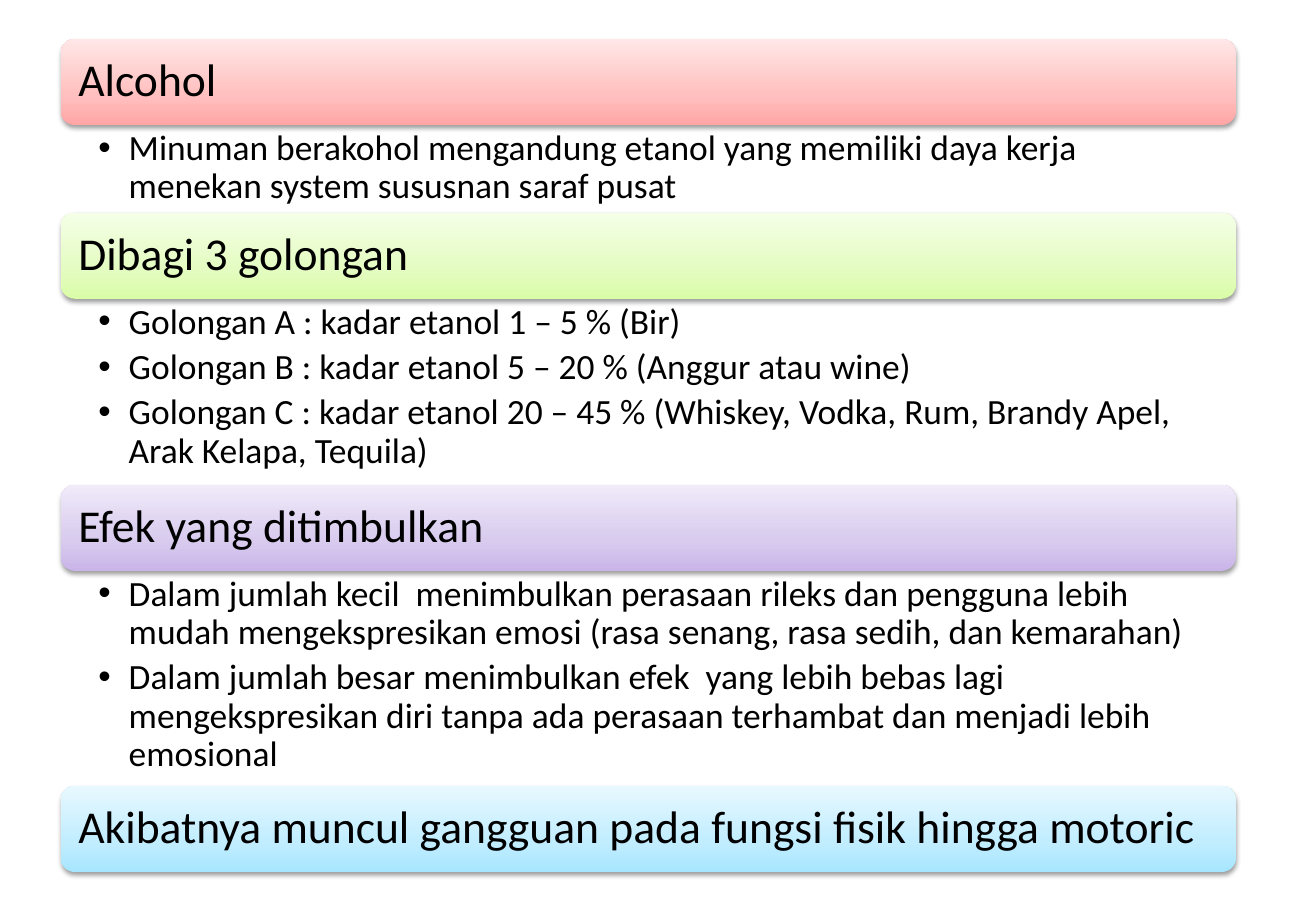
from copy import deepcopy

from lxml.etree import SubElement
from pptx import Presentation
from pptx.dml.color import RGBColor
from pptx.enum.shapes import MSO_SHAPE
from pptx.enum.text import MSO_ANCHOR, PP_ALIGN
from pptx.oxml.ns import qn
from pptx.util import Pt

PX = 9144
SLIDE_W, SLIDE_H = 1083, 750
LEFT, TOP, WIDTH, BAR_H = 50, 32, 967, 71
INDENT = 25

BLACK = RGBColor(0x00, 0x00, 0x00)
RED = [RGBColor(0xFF, 0xA6, 0xA5), RGBColor(0xFF, 0xC0, 0xBF), RGBColor(0xFF, 0xE7, 0xE7)]
GREEN = [RGBColor(0xDA, 0xFD, 0xA7), RGBColor(0xE4, 0xFC, 0xC2), RGBColor(0xF5, 0xFF, 0xE7)]
PURPLE = [RGBColor(0xC9, 0xB5, 0xE8), RGBColor(0xD8, 0xCB, 0xEE), RGBColor(0xF0, 0xEA, 0xF9)]
BLUE = [RGBColor(0xA7, 0xE6, 0xFF), RGBColor(0xC1, 0xED, 0xFF), RGBColor(0xE7, 0xF8, 0xFF)]
STOPS = [0, 0.35, 1]

SECTIONS = [
    ("Alcohol", RED, 72, [
        "Minuman berakohol mengandung etanol yang memiliki daya kerja menekan system sususnan saraf pusat",
    ]),
    ("Dibagi 3 golongan", GREEN, 153, [
        "Golongan A : kadar etanol 1 – 5 % (Bir)",
        "Golongan B : kadar etanol 5 – 20 % (Anggur atau wine)",
        "Golongan C : kadar etanol 20 – 45 % (Whiskey, Vodka, Rum, Brandy Apel, Arak Kelapa, Tequila)",
    ]),
    ("Efek yang ditimbulkan", PURPLE, 177, [
        "Dalam jumlah kecil  menimbulkan perasaan rileks dan pengguna lebih mudah "
        "mengekspresikan emosi (rasa senang, rasa sedih, dan kemarahan)",
        "Dalam jumlah besar menimbulkan efek  yang lebih bebas lagi mengekspresikan diri "
        "tanpa ada perasaan terhambat dan menjadi lebih emosional",
    ]),
    ("Akibatnya muncul gangguan pada fungsi fisik hingga motoric", BLUE, 0, []),
]

BAR_FRAME = {"margin_left": 11 * PX, "margin_right": 11 * PX, "margin_top": 11 * PX,
             "margin_bottom": 11 * PX, "vertical_anchor": MSO_ANCHOR.MIDDLE, "word_wrap": True}
BODY_FRAME = {"margin_left": 31 * PX, "margin_right": 21 * PX, "margin_top": 4 * PX,
              "margin_bottom": 4 * PX, "vertical_anchor": MSO_ANCHOR.TOP, "word_wrap": True}
PARAGRAPH = {"alignment": PP_ALIGN.LEFT, "line_spacing": 0.9, "space_after": Pt(4.2)}
BAR_FONT = {"name": "Calibri", "size": Pt(27)}
BODY_FONT = {"name": "Calibri", "size": Pt(21)}


def apply(target, values):
    for name, value in values.items():
        setattr(target, name, value)


def write(tf, lines, frame, font):
    apply(tf, frame)
    for i, line in enumerate(lines):
        p = tf.add_paragraph() if i else tf.paragraphs[0]
        apply(p, PARAGRAPH)
        r = p.add_run()
        r.text = line
        apply(r.font, font)
        r.font.color.rgb = BLACK


def add_bullets(tf):
    for p in tf.paragraphs:
        pPr = p._p.get_or_add_pPr()
        pPr.set("marL", str(INDENT * PX))
        pPr.set("indent", str(-INDENT * PX))
        SubElement(pPr, qn("a:buFont"), typeface="Arial")
        SubElement(pPr, qn("a:buChar"), char="•")


def paint_gradient(sp, colors):
    sp.fill.gradient()
    sp.fill.gradient_angle = 90
    first = sp._element.spPr.find(".//" + qn("a:gs"))
    first.addnext(deepcopy(first))
    for stop, position, color in zip(sp.fill.gradient_stops, STOPS, colors):
        stop.position = position
        stop.color.rgb = color


def add_shadow(sp):
    sp.shadow.inherit = False
    effects = sp._element.spPr.find(qn("a:effectLst"))
    shadow = SubElement(effects, qn("a:outerShdw"), blurRad=str(Pt(3.1)), dist=str(Pt(1.6)),
                        dir="5400000", rotWithShape="0")
    color = SubElement(shadow, qn("a:srgbClr"), val=str(BLACK))
    SubElement(color, qn("a:alpha"), val="38000")


def add_bar(slide, y, title, colors):
    sp = slide.shapes.add_shape(MSO_SHAPE.ROUNDED_RECTANGLE,
                                LEFT * PX, y * PX, WIDTH * PX, BAR_H * PX)
    paint_gradient(sp, colors)
    sp.line.fill.background()
    add_shadow(sp)
    write(sp.text_frame, [title], BAR_FRAME, BAR_FONT)


def add_body(slide, y, height, lines):
    sp = slide.shapes.add_textbox(LEFT * PX, y * PX, WIDTH * PX, height * PX)
    write(sp.text_frame, lines, BODY_FRAME, BODY_FONT)
    add_bullets(sp.text_frame)


def main():
    prs = Presentation()
    prs.slide_width, prs.slide_height = SLIDE_W * PX, SLIDE_H * PX
    slide = prs.slides.add_slide(prs.slide_layouts[6])
    y = TOP
    for title, colors, body_h, lines in SECTIONS:
        add_bar(slide, y, title, colors)
        y += BAR_H
        if lines:
            add_body(slide, y, body_h, lines)
            y += body_h
    prs.save("out.pptx")


if __name__ == "__main__":
    main()
